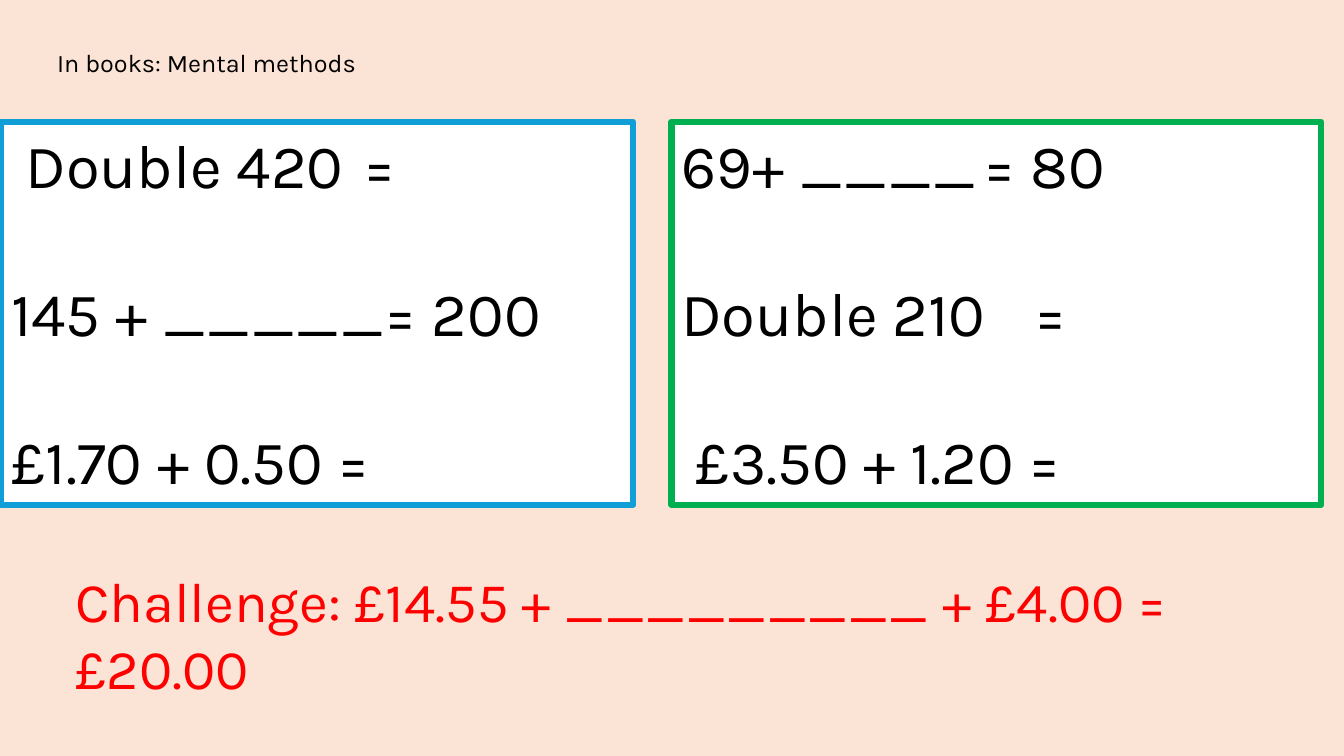
import dataclasses

import pptx
import pptx.dml.color
import pptx.enum.shapes
import pptx.enum.text
import pptx.oxml
import pptx.oxml.ns
import pptx.util

Cm = pptx.util.Cm
Pt = pptx.util.Pt


@dataclasses.dataclass(frozen=True)
class Theme:
    font: str = "Karla"
    background: str = "FBE3D6"
    panel: str = "FFFFFF"
    text: str = "000000"
    blue: str = "0F9ED5"
    green: str = "00B050"
    challenge: str = "FF0000"
    title_size: int = 18
    question_size: int = 44
    challenge_size: int = 40
    question_gap: float = 53
    border: float = 4.5


@dataclasses.dataclass(frozen=True)
class Question:
    text: str
    indent: float = 0
    tab: float = 0


class WorksheetSlide:
    """Draws worksheet elements on one slide in a shared style."""

    def __init__(self, slide, theme):
        self.slide = slide
        self.theme = theme
        self.paint(slide.background.fill, theme.background)

    def paint(self, fill, color):
        fill.solid()
        fill.fore_color.rgb = pptx.dml.color.RGBColor.from_string(color)

    def add_run(self, paragraph, text, size, color):
        run = paragraph.add_run()
        run.text = text
        run.font.name = self.theme.font
        run.font.size = Pt(size)
        self.paint(run.font.fill, color)

    def add_text(self, left, top, width, height, text, size, color):
        box = self.slide.shapes.add_textbox(Cm(left), Cm(top), Cm(width), Cm(height))
        box.text_frame.word_wrap = True
        self.add_run(box.text_frame.paragraphs[0], text, size, color)

    def set_indent_and_tab(self, paragraph, question):
        properties = paragraph._p.get_or_add_pPr()
        properties.set("marL", "0")
        properties.set("indent", str(Cm(question.indent)))
        if question.tab:
            tabs = pptx.oxml.parse_xml(
                f'<a:tabLst {pptx.oxml.ns.nsdecls("a")}>'
                f'<a:tab pos="{Cm(question.tab)}" algn="l"/></a:tabLst>'
            )
            properties.append(tabs)

    def add_panel(self, left, top, width, height, border, questions):
        panel = self.slide.shapes.add_shape(
            pptx.enum.shapes.MSO_SHAPE.RECTANGLE, Cm(left), Cm(top), Cm(width), Cm(height)
        )
        panel.shadow.inherit = False
        self.paint(panel.fill, self.theme.panel)
        self.paint(panel.line.fill, border)
        panel.line.width = Pt(self.theme.border)
        frame = panel.text_frame
        frame.word_wrap = True
        frame.vertical_anchor = pptx.enum.text.MSO_ANCHOR.TOP
        for index, question in enumerate(questions):
            paragraph = frame.add_paragraph() if index else frame.paragraphs[0]
            paragraph.alignment = pptx.enum.text.PP_ALIGN.LEFT
            self.set_indent_and_tab(paragraph, question)
            if index:
                paragraph.space_before = Pt(self.theme.question_gap)
            self.add_run(paragraph, question.text, self.theme.question_size, self.theme.text)


def main():
    theme = Theme()
    presentation = pptx.Presentation()
    presentation.slide_width = Cm(33.87)
    presentation.slide_height = Cm(19.05)
    slide = presentation.slides.add_slide(presentation.slide_layouts[6])
    worksheet = WorksheetSlide(slide, theme)

    panel_top, panel_height = 3.07, 9.65
    worksheet.add_panel(0.03, panel_top, 15.93, panel_height, theme.blue, [
        Question("Double 420\t=", indent=0.36, tab=9.1),
        Question("145 + _____= 200"),
        Question("£1.70 + 0.50 ="),
    ])
    worksheet.add_panel(16.92, panel_top, 16.38, panel_height, theme.green, [
        Question("69+ ____\t= 80", tab=8.2),
        Question("Double 210\t=", tab=8.4),
        Question("£3.50 + 1.20 =", indent=0.36),
    ])
    worksheet.add_text(1.65, 14.15, 29.57, 1.96,
                       "Challenge: £14.55 + _________ + £4.00 = £20.00",
                       theme.challenge_size, theme.challenge)
    worksheet.add_text(1.19, 1.07, 13.79, 1.02, "In books: Mental methods",
                       theme.title_size, theme.text)
    presentation.save("out.pptx")


if __name__ == "__main__":
    main()
